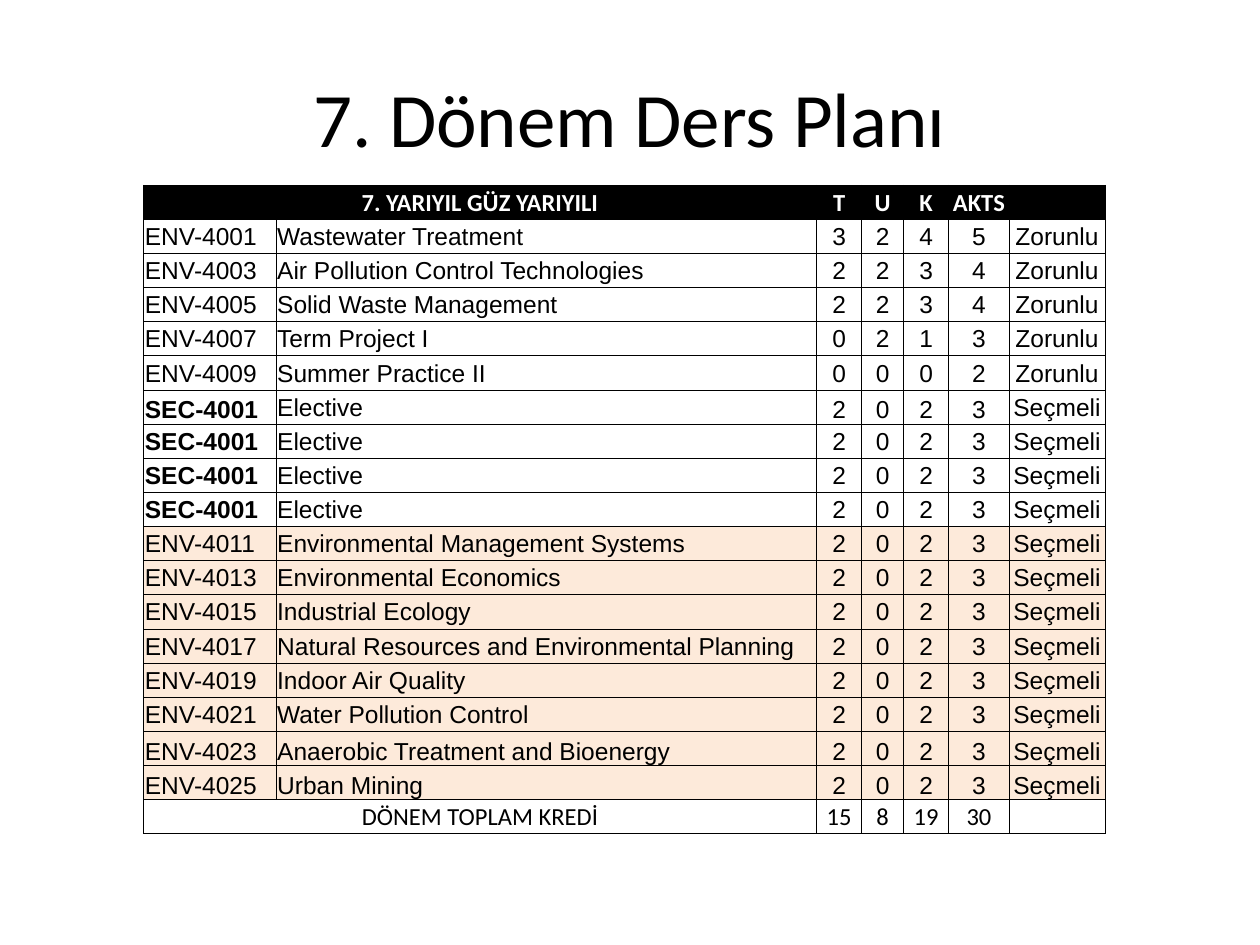
from pptx import Presentation
from pptx.dml.color import RGBColor
from pptx.enum.text import MSO_ANCHOR as ANCHOR, PP_ALIGN as ALIGN
from pptx.oxml import parse_xml
from pptx.oxml.ns import nsdecls
from pptx.util import Emu, Inches, Pt

# Content
TITLE = "7. Dönem Ders Planı"
HEADER = ("7. YARIYIL GÜZ YARIYILI", "", "T", "U", "K", "AKTS", "")
REQUIRED = [
    ("ENV-4001", "Wastewater Treatment", 3, 2, 4, 5),
    ("ENV-4003", "Air Pollution Control Technologies", 2, 2, 3, 4),
    ("ENV-4005", "Solid Waste Management", 2, 2, 3, 4),
    ("ENV-4007", "Term Project I", 0, 2, 1, 3),
    ("ENV-4009", "Summer Practice II", 0, 0, 0, 2),
]
ELECTIVE_SLOTS = [("SEC-4001", "Elective")] * 4
ELECTIVES = [
    ("ENV-4011", "Environmental Management Systems"),
    ("ENV-4013", "Environmental Economics"),
    ("ENV-4015", "Industrial Ecology"),
    ("ENV-4017", "Natural Resources and Environmental Planning"),
    ("ENV-4019", "Indoor Air Quality"),
    ("ENV-4021", "Water Pollution Control"),
    ("ENV-4023", "Anaerobic Treatment and Bioenergy"),
    ("ENV-4025", "Urban Mining"),
]
TOTAL = ("DÖNEM TOPLAM KREDİ", "", 15, 8, 19, 30, "")
ELECTIVE_CREDITS = (2, 0, 2, 3)

ROWS = ([HEADER]
        + [row + ("Zorunlu",) for row in REQUIRED]
        + [row + ELECTIVE_CREDITS + ("Seçmeli",) for row in ELECTIVE_SLOTS + ELECTIVES]
        + [TOTAL])
LAST = len(ROWS) - 1
FIRST_SLOT = 1 + len(REQUIRED)
FIRST_ELECTIVE = FIRST_SLOT + len(ELECTIVE_SLOTS)

# Layout and style
LEFT, TOP, HEIGHT = 1.14, 1.47, 5.15
COL_WIDTHS = (1.05, 4.29, 0.36, 0.33, 0.36, 0.48, 0.76)
BLACK, WHITE, PEACH = "000000", "FFFFFF", "FDEADA"
SIZE = 14


def rgb(color):
    return RGBColor.from_string(color)


def set_text(p, text, size, font, color, bold=False, align=ALIGN.CENTER):
    p.text = str(text)
    p.alignment = align
    f = p.font
    f.size, f.name, f.bold = Pt(size), font, bold
    f.color.rgb = rgb(color)


def set_borders(cell):
    tc_pr = cell._tc.get_or_add_tcPr()
    for side in ("lnL", "lnR", "lnT", "lnB"):
        tc_pr.append(parse_xml(
            f'<a:{side} {nsdecls("a")} w="{Pt(0.5)}"><a:solidFill>'
            f'<a:srgbClr val="{BLACK}"/></a:solidFill></a:{side}>'))


def set_fill(cell, color):
    if color:
        cell.fill.solid()
        cell.fill.fore_color.rgb = rgb(color)
    else:
        cell.fill.background()


def row_fill(i):
    if i == 0:
        return BLACK
    return PEACH if FIRST_ELECTIVE <= i < LAST else None


def anchor(i, j):
    low_slot = i == FIRST_SLOT and j not in (1, 6)
    low_row = LAST - 2 <= i < LAST
    return ANCHOR.BOTTOM if low_slot or low_row else ANCHOR.MIDDLE


prs = Presentation()
prs.slide_width, prs.slide_height = Inches(10), Inches(7.5)
s = prs.slides.add_slide(prs.slide_layouts[6])

# Title
tf = s.shapes.add_textbox(Inches(0.5), Inches(0.3), Inches(9), Inches(1.25)).text_frame
tf.word_wrap = True
tf.vertical_anchor = ANCHOR.MIDDLE
set_text(tf.paragraphs[0], TITLE, 44, "Calibri", BLACK)

# Course table
table = s.shapes.add_table(len(ROWS), len(COL_WIDTHS), Inches(LEFT), Inches(TOP),
                           Inches(sum(COL_WIDTHS)), Inches(HEIGHT)).table
table.first_row = table.horz_banding = False
for col, width in zip(table.columns, COL_WIDTHS):
    col.width = Inches(width)
for row in table.rows:
    row.height = Emu(Inches(HEIGHT) // len(ROWS))

for i, values in enumerate(ROWS):
    outer = i in (0, LAST)
    for j, value in enumerate(values):
        cell = table.cell(i, j)
        cell.margin_left = cell.margin_right = cell.margin_top = Inches(0.01)
        cell.margin_bottom = 0
        cell.vertical_anchor = anchor(i, j)
        set_borders(cell)
        set_fill(cell, row_fill(i))
        p = cell.text_frame.paragraphs[0]
        if value == "":
            # Keep empty cells from stretching their row
            p._p.get_or_add_endParaRPr().set("sz", str(SIZE * 100))
            continue
        slot_code = j == 0 and FIRST_SLOT <= i < FIRST_ELECTIVE
        set_text(p, value, SIZE,
                 font="Calibri" if outer else "Arial",
                 color=WHITE if i == 0 else BLACK,
                 bold=i == 0 or slot_code,
                 align=ALIGN.LEFT if j < 2 and not outer else ALIGN.CENTER)

# Header and total labels span the code and name columns
for i in (0, LAST):
    table.cell(i, 0).merge(table.cell(i, 1))

prs.save("out.pptx")
